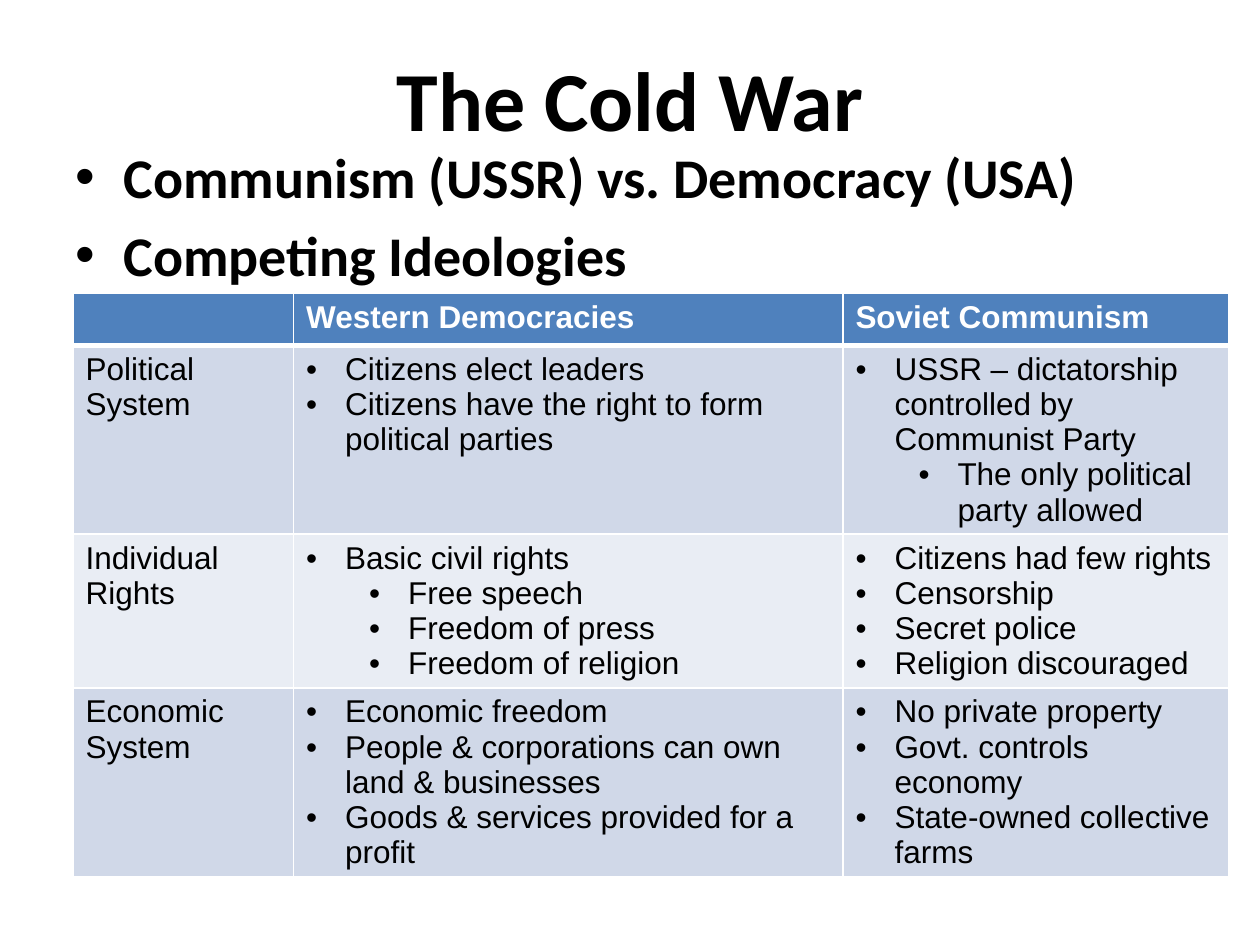
import pptx
import pptx.util
import pptx.dml.color
import pptx.enum.text
import pptx.oxml
import pptx.oxml.ns
from dataclasses import dataclass


@dataclass(frozen=True)
class Theme:
    heading_font: str = "Calibri"
    table_font: str = "Arial"
    title_size: int = 48
    body_size: int = 32
    table_size: int = 18
    text: str = "000000"
    header_text: str = "FFFFFF"
    border: str = "FFFFFF"
    header_fill: str = "4F81BD"
    band_fills: tuple = ("D0D8E8", "E9EDF4")


theme = Theme()
Inches = pptx.util.Inches
Pt = pptx.util.Pt
RGBColor = pptx.dml.color.RGBColor


def style(paragraph, name, size, color, bold):
    font = paragraph.font
    font.name = name
    font.size = Pt(size)
    font.color.rgb = RGBColor.from_string(color)
    font.bold = bold


def add_bullet(paragraph, left, hanging):
    properties = paragraph._p.get_or_add_pPr()
    properties.set("marL", str(Inches(left)))
    properties.set("indent", str(-Inches(hanging)))
    for tag, key, value in (("buFont", "typeface", "Arial"), ("buChar", "char", "•")):
        element = pptx.oxml.parse_xml(f'<a:{tag} {pptx.oxml.ns.nsdecls("a")} {key}="{value}"/>')
        properties.append(element)


deck = pptx.Presentation()
deck.slide_width = Inches(10)
deck.slide_height = Inches(7.5)
page = deck.slides.add_slide(deck.slide_layouts[1])

title = page.shapes.title
title.left, title.top, title.width, title.height = map(Inches, (0.5, 0.3, 9, 0.95))
title.text_frame.text = "The Cold War"
title.text_frame.auto_size = pptx.enum.text.MSO_AUTO_SIZE.NONE
title.text_frame.vertical_anchor = pptx.enum.text.MSO_ANCHOR.MIDDLE
title.text_frame.paragraphs[0].alignment = pptx.enum.text.PP_ALIGN.CENTER
style(title.text_frame.paragraphs[0], theme.heading_font, theme.title_size, theme.text, True)

body = page.placeholders[1]
body.left, body.top, body.width, body.height = map(Inches, (0.5, 1.08, 9, 1.33))
body.text_frame.text = "Communism (USSR) vs. Democracy (USA)\nCompeting Ideologies"
body.text_frame.auto_size = pptx.enum.text.MSO_AUTO_SIZE.NONE
for index, para in enumerate(body.text_frame.paragraphs):
    para.space_before = Pt(theme.body_size * 0.2 if index else 0)
    add_bullet(para, 0.38, 0.38)
    style(para, theme.heading_font, theme.body_size, theme.text, True)

headers = ["", "Western Democracies", "Soviet Communism"]
topics = [
    (
        "Political System",
        [(0, "Citizens elect leaders"), (0, "Citizens have the right to form political parties")],
        [
            (0, "USSR – dictatorship controlled by Communist Party"),
            (1, "The only political party allowed"),
        ],
    ),
    (
        "Individual Rights",
        [
            (0, "Basic civil rights"),
            (1, "Free speech"),
            (1, "Freedom of press"),
            (1, "Freedom of religion"),
        ],
        [
            (0, "Citizens had few rights"),
            (0, "Censorship"),
            (0, "Secret police"),
            (0, "Religion discouraged"),
        ],
    ),
    (
        "Economic System",
        [
            (0, "Economic freedom"),
            (0, "People & corporations can own land & businesses"),
            (0, "Goods & services provided for a profit"),
        ],
        [
            (0, "No private property"),
            (0, "Govt. controls economy"),
            (0, "State-owned collective farms"),
        ],
    ),
]
column_widths = [1.75, 4.36, 3.06]
row_heights = [0.41, 1.5, 1.22, 1.5]

table = page.shapes.add_table(
    len(row_heights), len(column_widths), Inches(0.58), Inches(2.33),
    Inches(sum(column_widths)), Inches(sum(row_heights)),
).table
for column, width in zip(table.columns, column_widths):
    column.width = Inches(width)
for row, height in zip(table.rows, row_heights):
    row.height = Inches(height)

for row_index, entries in enumerate([headers, *topics]):
    is_header = row_index == 0
    fill = theme.header_fill if is_header else theme.band_fills[(row_index - 1) % 2]
    color = theme.header_text if is_header else theme.text
    for column_index, entry in enumerate(entries):
        cell = table.cell(row_index, column_index)
        cell.fill.solid()
        cell.fill.fore_color.rgb = RGBColor.from_string(fill)
        has_bullets = isinstance(entry, list)
        items = entry if has_bullets else [(0, entry)]
        cell.text_frame.text = "\n".join(text for level, text in items)
        for para, (level, text) in zip(cell.text_frame.paragraphs, items):
            if has_bullets:
                para.level = level
                add_bullet(para, 0.31 + 0.5 * level, 0.31)
            style(para, theme.table_font, theme.table_size, color, is_header)
        for position, side in enumerate("LRTB"):
            thick = (is_header and side == "B") or (row_index == 1 and side == "T")
            line = pptx.oxml.parse_xml(
                f'<a:ln{side} {pptx.oxml.ns.nsdecls("a")} w="{Pt(3 if thick else 1)}">'
                f'<a:solidFill><a:srgbClr val="{theme.border}"/></a:solidFill></a:ln{side}>'
            )
            cell._tc.get_or_add_tcPr().insert(position, line)

deck.save("out.pptx")
